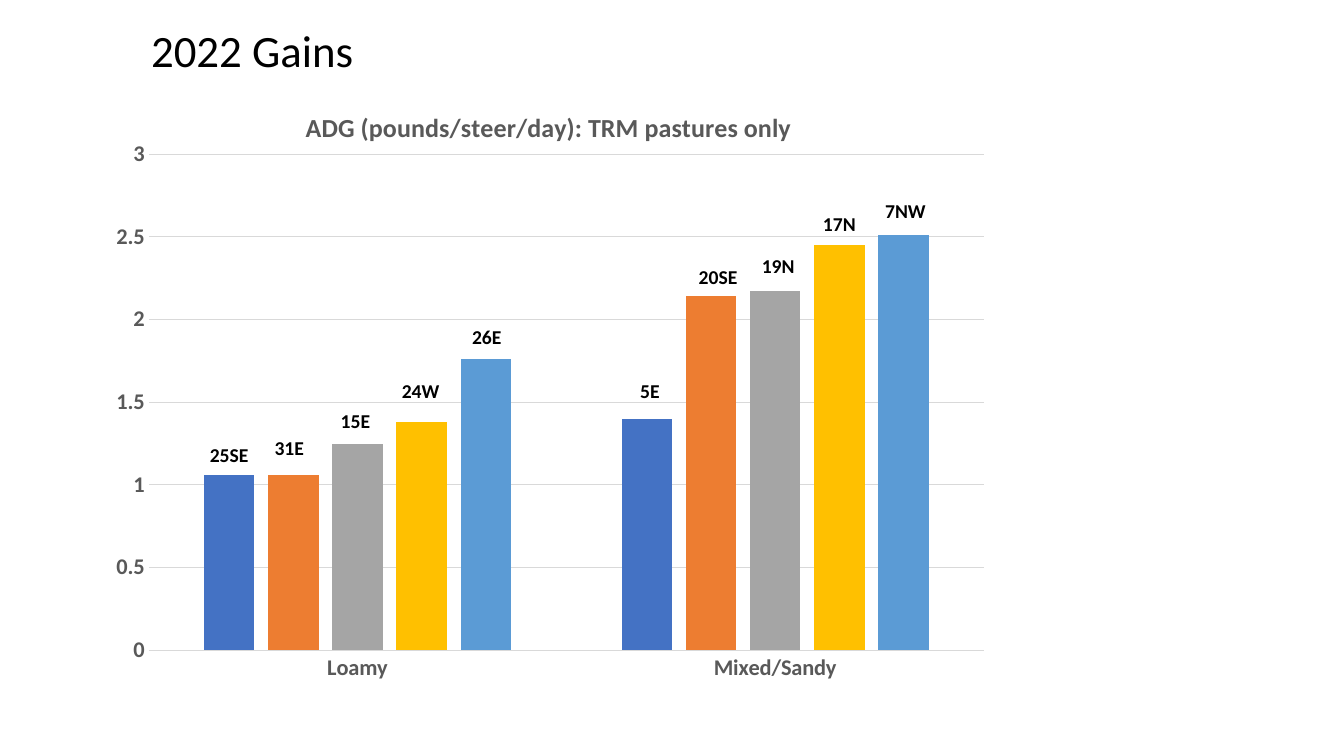
from lxml import etree
from pptx import Presentation
from pptx.chart.data import CategoryChartData
from pptx.dml.color import RGBColor
from pptx.enum import chart as ch, text as tx
from pptx.oxml import ns
from pptx.util import Inches, Pt

FONT = "Calibri"
BLACK, GREY, RULE = "000000", "595959", "D9D9D9"
SOILS = ["Loamy", "Mixed/Sandy"]
GAINS = [  # one series per bar position: colour, gain for each soil
    ("4472C4", (1.06, 1.4)),
    ("ED7D31", (1.06, 2.14)),
    ("A5A5A5", (1.25, 2.17)),
    ("FFC000", (1.38, 2.45)),
    ("5B9BD5", (1.76, 2.51)),
]
PASTURES = [  # per soil: name, shift right of the bar's middle, lift above its top
    [("25SE", 0, .2), ("31E", -.04, .27), ("15E", -.02, .22), ("24W", -.01, .31), ("26E", .01, .22)],
    [("5E", .03, .28), ("20SE", .07, .19), ("19N", .03, .25), ("17N", 0, .21), ("7NW", .02, .24)],
]
GAIN_MAX = 3
GAP, OVERLAP = 219, -27
PLOT = (0.05, 0.103, 0.932, 0.83)  # shares of the chart's box


def color(hex_code):
    return RGBColor.from_string(hex_code)


def style_font(font, size, hex_code, bold=False):
    font.name, font.size, font.bold = FONT, Pt(size), bold
    font.color.rgb = color(hex_code)


def add_text(slide, box, words, size, bold=False, wrap=True, align=tx.PP_ALIGN.LEFT):
    frame = slide.shapes.add_textbox(*(Inches(v) for v in box)).text_frame
    frame.word_wrap = wrap
    frame.auto_size = tx.MSO_AUTO_SIZE.SHAPE_TO_FIT_TEXT
    frame.text = words
    frame.paragraphs[0].alignment = align
    style_font(frame.paragraphs[0].runs[0].font, size, BLACK, bold)


def set_layout(parent, index, **settings):
    """Fix the place of a chart part, given in shares of the chart."""
    for old in parent.findall(ns.qn("c:layout")):
        parent.remove(old)
    layout = etree.Element(ns.qn("c:layout"))
    manual = etree.SubElement(layout, ns.qn("c:manualLayout"))
    for tag, value in settings.items():
        etree.SubElement(manual, ns.qn(f"c:{tag}")).set("val", str(value))
    parent.insert(index, layout)


def style_axis(axis):
    axis.major_tick_mark = axis.minor_tick_mark = ch.XL_TICK_MARK.NONE
    style_font(axis.tick_labels.font, 16, GREY, True)


def style_rule(line):
    line.color.rgb = color(RULE)
    line.width = Pt(0.75)


def add_gain_chart(slide, box):
    data = CategoryChartData()
    data.categories = SOILS
    for number, (_, gains) in enumerate(GAINS, 1):
        data.add_series(f"Series {number}", gains)
    chart = slide.shapes.add_chart(
        ch.XL_CHART_TYPE.COLUMN_CLUSTERED, *(Inches(v) for v in box), data).chart
    style_font(chart.font, 10, BLACK)
    chart.has_legend = False

    heading = chart.chart_title
    heading.text_frame.text = "ADG (pounds/steer/day): TRM pastures only"
    style_font(heading.text_frame.paragraphs[0].runs[0].font, 18.6, GREY, True)
    set_layout(heading._element, 1, xMode="edge", yMode="edge", x=0.22, y=0.02)

    style_axis(chart.category_axis)
    style_rule(chart.category_axis.format.line)
    gain_axis = chart.value_axis
    style_axis(gain_axis)
    gain_axis.format.line.fill.background()
    gain_axis.minimum_scale, gain_axis.maximum_scale = 0, GAIN_MAX
    gain_axis.major_unit = 0.5
    style_rule(gain_axis.major_gridlines.format.line)

    bars = chart.plots[0]
    bars.gap_width, bars.overlap, bars.vary_by_categories = GAP, OVERLAP, False
    for series, (fill, _) in zip(bars.series, GAINS):
        series.format.fill.solid()
        series.format.fill.fore_color.rgb = color(fill)
    plot_area = chart._chartSpace.find(".//" + ns.qn("c:plotArea"))
    set_layout(plot_area, 0, layoutTarget="inner", xMode="edge", yMode="edge",
               **dict(zip("xywh", PLOT)))


def add_pasture_labels(slide, box):
    """Name each bar, working out its place from the chart's box."""
    left, top, width, height = box
    plot_left, plot_top = left + PLOT[0] * width, top + PLOT[1] * height
    plot_height = PLOT[3] * height
    slot = PLOT[2] * width / len(SOILS)
    step = 1 - OVERLAP / 100
    bar = slot / (1 + step * (len(GAINS) - 1) + GAP / 100)
    label_w, label_h = 0.7, 0.34
    for soil, names in enumerate(PASTURES):
        for position, (name, shift, lift) in enumerate(names):
            middle = plot_left + soil * slot + bar * (GAP / 200 + 0.5 + step * position)
            bar_top = plot_top + plot_height * (1 - GAINS[position][1][soil] / GAIN_MAX)
            place = (middle + shift - label_w / 2, bar_top - lift - label_h / 2, label_w, label_h)
            add_text(slide, place, name, 14, bold=True, wrap=False, align=tx.PP_ALIGN.CENTER)


def main():
    deck = Presentation()
    deck.slide_width, deck.slide_height = Inches(13.33), Inches(7.5)
    slide = deck.slides.add_slide(deck.slide_layouts[6])
    chart_box = (1.03, 0.92, 8.89, 5.93)
    add_gain_chart(slide, chart_box)
    add_pasture_labels(slide, chart_box)
    add_text(slide, (1.4, 0.18, 8.21, 0.64), "2022 Gains", 32)
    deck.save("out.pptx")


if __name__ == "__main__":
    main()
